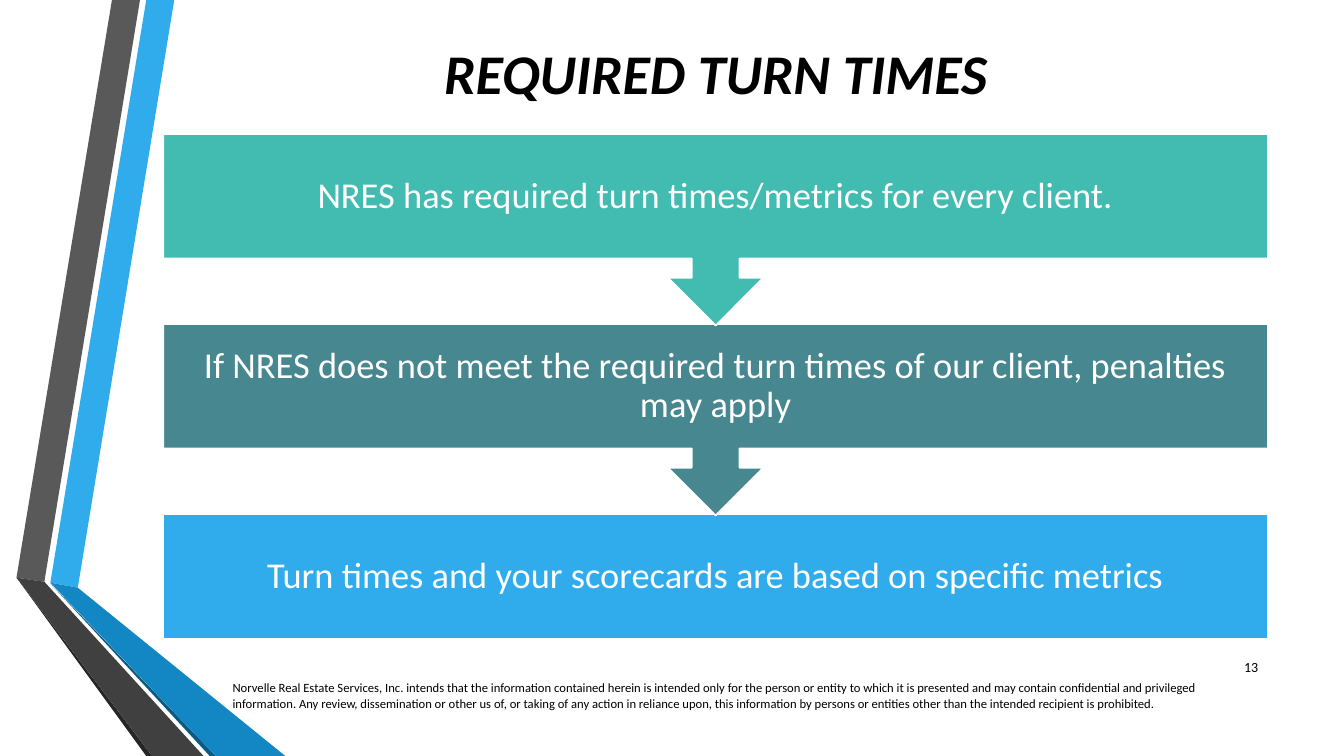
from dataclasses import dataclass
from typing import NamedTuple

from pptx import Presentation
from pptx import util as u
from pptx.dml import color as dml
from pptx.enum import shapes, text

Pt = u.Pt
Kind = shapes.MSO_SHAPE
Align = text.PP_ALIGN


@dataclass(frozen=True)
class Theme:
    font: str = "Calibri"
    black: str = "000000"
    white: str = "FFFFFF"
    teal: str = "42BBB1"
    slate: str = "468790"
    blue: str = "30ACEC"
    ocean: str = "1287C3"
    navy: str = "0C5A82"
    gray: str = "595959"
    coal: str = "404040"
    soot: str = "262626"
    title: int = 40
    step: int = 26
    number: int = 10
    notice: int = 9


class Box(NamedTuple):
    left: float
    top: float
    width: float
    height: float


class Band(NamedTuple):
    color: str
    points: list[tuple[float, float]]


class Step(NamedTuple):
    words: str
    color: str
    kind: int
    height: float


class Label(NamedTuple):
    words: str
    box: Box
    size: int
    align: int
    strong: bool = False


THEME = Theme()
LEFT, WIDTH = 116.64, 789.12
TOP, PITCH = 95.8, 135.7

BANDS = [
    Band(THEME.blue, [(36, 416.2), (55.6, 419.8), (124.5, 0), (104.5, 0)]),
    Band(THEME.gray, [(100, 0), (80, 0), (11.8, 412.6), (31.7, 415.6)]),
    Band(THEME.soot, [(11.8, 412.6), (104.5, 540), (108.7, 540)]),
    Band(THEME.navy, [(36, 416.8), (149.8, 540), (154.1, 540)]),
    Band(THEME.ocean, [(36, 416.2), (154.1, 540), (203.8, 540), (55.6, 419.8)]),
    Band(THEME.coal, [(11.8, 412.6), (108.7, 540), (145.4, 540), (31.7, 415.6)]),
]

STEPS = [
    Step("NRES has required turn times/metrics for every client.",
         THEME.teal, Kind.DOWN_ARROW_CALLOUT, 136.8),
    Step("If NRES does not meet the required turn times of our client, "
         "penalties may apply",
         THEME.slate, Kind.DOWN_ARROW_CALLOUT, 136.8),
    Step("Turn times and your scorecards are based on specific metrics",
         THEME.blue, Kind.RECTANGLE, 89),
]

LABELS = [
    Label("REQUIRED TURN TIMES", Box(LEFT, 20.9, WIDTH, 61.2),
          THEME.title, Align.CENTER, True),
    Label("Norvelle Real Estate Services, Inc. intends that the information "
          "contained herein is intended only for the person or entity to which "
          "it is presented and may contain confidential and privileged "
          "information. Any review, dissemination or other us of, or taking of "
          "any action in reliance upon, this information by persons or entities "
          "other than the intended recipient is prohibited.",
          Box(159.1, 482.4, 725, 28.8), THEME.notice, Align.LEFT),
    Label("13", Box(862.6, 462.2, 43.2, 28.8), THEME.number, Align.RIGHT),
]


def paint(shape, color: str) -> None:
    shape.shadow.inherit = False
    shape.fill.solid()
    shape.fill.fore_color.rgb = dml.RGBColor.from_string(color)


def write(shape, words: str, size: int, color: str, align: int):
    frame = shape.text_frame
    frame.word_wrap = True
    frame.vertical_anchor = text.MSO_ANCHOR.MIDDLE
    para = frame.paragraphs[0]
    para.text = words
    para.alignment = align
    para.font.name = THEME.font
    para.font.size = Pt(size)
    para.font.color.rgb = dml.RGBColor.from_string(color)
    return para


def draw_band(slide, band: Band) -> None:
    first, *rest = [(Pt(x), Pt(y)) for x, y in band.points]
    pen = slide.shapes.build_freeform(*first)
    pen.add_line_segments(rest)
    shape = pen.convert_to_shape()
    paint(shape, band.color)
    shape.line.fill.background()


def draw_step(slide, step: Step, top: float) -> None:
    box = Box(LEFT, top, WIDTH, step.height)
    shape = slide.shapes.add_shape(step.kind, *map(Pt, box))
    paint(shape, step.color)
    shape.line.color.rgb = dml.RGBColor.from_string(THEME.white)
    shape.line.width = Pt(1.25)
    para = write(shape, step.words, THEME.step, THEME.white, Align.CENTER)
    para.line_spacing = 0.9
    frame = shape.text_frame
    frame.margin_left = frame.margin_right = Pt(14.4)
    frame.margin_top = frame.margin_bottom = Pt(14.4)


def draw_label(slide, label: Label) -> None:
    shape = slide.shapes.add_textbox(*map(Pt, label.box))
    para = write(shape, label.words, label.size, THEME.black, label.align)
    para.font.bold = para.font.italic = label.strong


def main() -> None:
    deck = Presentation()
    deck.slide_width, deck.slide_height = Pt(960), Pt(540)
    slide = deck.slides.add_slide(deck.slide_layouts[6])
    for band in BANDS:
        draw_band(slide, band)
    for row, step in reversed(list(enumerate(STEPS))):
        draw_step(slide, step, TOP + row * PITCH)
    for label in LABELS:
        draw_label(slide, label)
    deck.save("out.pptx")


if __name__ == "__main__":
    main()
